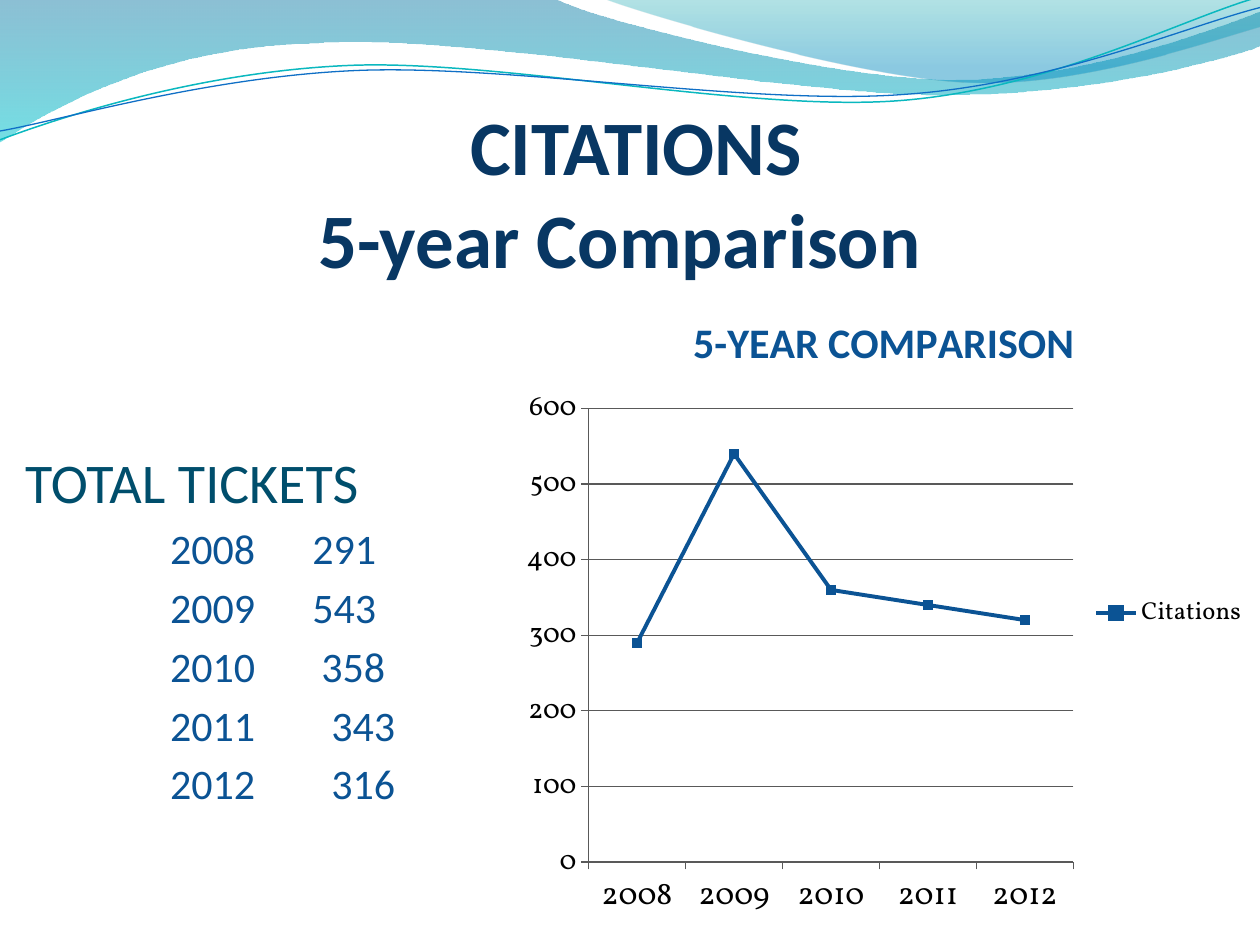
"""Build a slide comparing five years of citations in a list and a line chart."""
import lxml.etree
import pptx
import pptx.chart.data
import pptx.dml.color
import pptx.enum.chart
import pptx.enum.text
import pptx.oxml
import pptx.oxml.ns
import pptx.util

RGBColor = pptx.dml.color.RGBColor
Inches = pptx.util.Inches
Pt = pptx.util.Pt
qn = pptx.oxml.ns.qn

NAVY = RGBColor(0x08, 0x37, 0x63)
BLUE = RGBColor(0x0B, 0x53, 0x94)
TEAL = RGBColor(0x00, 0x4E, 0x6C)
BLACK = RGBColor(0x00, 0x00, 0x00)
GRAY = RGBColor(0x59, 0x59, 0x59)
WAVE_TEAL = RGBColor(0x0A, 0xB8, 0xBF)
WAVE_BLUE = RGBColor(0x0F, 0x6F, 0xC6)
HEADING_FONT = "Calibri"
CHART_FONT = "Vollkorn"

TITLE = "CITATIONS\v5-year Comparison"
LIST_HEADING = "TOTAL TICKETS"
TICKETS = [("2008", "291"), ("2009", "543"), ("2010", "358"), ("2011", "343"), ("2012", "316")]
YEAR_TAB = 1.15
VALUE_TABS = [2.28, 2.28, 2.35, 2.43, 2.43]
CHART_TITLE = "5-YEAR COMPARISON"
SERIES_NAME = "Citations"
CHART_VALUES = [290, 540, 360, 340, 320]

BANDS = [
    ([(0, 0), [(4.4, -0.01)],
      [(4.76, 0.17), (6.64, 0.63), (7.58, 0.63)],
      [(8.53, 0.63), (9.58, 0.26), (10, 0.09)],
      [(10.01, 0.36)],
      [(9.83, 0.44), (8.7, 0.76), (7.46, 0.75)],
      [(6.22, 0.75), (3.82, 0.28), (2.57, 0.34)],
      [(1.29, 0.36), (0.46, 0.83), (-0.01, 1.13)]],
     [(0, RGBColor(0x00, 0x74, 0xA1), 45), (100, RGBColor(0x00, 0xC6, 0xCF), 55)]),
    ([(4.79, -0.01),
      [(5.09, 0.11), (6.82, 0.62), (7.69, 0.65)],
      [(8.56, 0.69), (9.61, 0.32), (10, 0.21)],
      [(10, 0)]],
     [(0, RGBColor(0x00, 0xA1, 0xA9), 30), (80, RGBColor(0x00, 0x8B, 0xBF), 45)]),
]
WAVES = [
    ([(0, 1.11),
      [(0.48, 0.93), (1.58, 0.57), (2.77, 0.52)],
      [(3.95, 0.47), (5.93, 0.89), (7.13, 0.8)],
      [(8.33, 0.71), (9.38, 0.15), (9.98, -0.02)]], WAVE_TEAL, 0.85),
    ([(0, 1.04),
      [(0.47, 0.96), (1.64, 0.61), (2.83, 0.56)],
      [(4.03, 0.51), (5.97, 0.84), (7.17, 0.75)],
      [(8.36, 0.67), (9.41, 0.21), (10, 0.06)]], WAVE_BLUE, 0.75),
]


def add_outline(slide, outline, closed):
    """Draw an outline, turning each three-point segment into a curve."""
    start, *segments = outline
    builder = slide.shapes.build_freeform(*map(Inches, start))
    builder.add_line_segments([tuple(map(Inches, segment[-1])) for segment in segments], close=closed)
    shape = builder.convert_to_shape()
    shape.shadow.inherit = False
    lines = list(shape._element.iter(qn("a:lnTo")))
    for line, segment in zip(lines, segments):
        if len(segment) == 3:
            curve = lxml.etree.Element(qn("a:cubicBezTo"))
            for x, y in segment:
                lxml.etree.SubElement(curve, qn("a:pt"), x=str(Inches(x) - shape.left),
                                      y=str(Inches(y) - shape.top))
            line.getparent().replace(line, curve)
    return shape


def fill_gradient(shape, stops):
    """Fill a shape with a vertical, partly transparent gradient."""
    shape.fill.gradient()
    gradient = shape._element.spPr.find(qn("a:gradFill"))
    for child in list(gradient):
        gradient.remove(child)
    stop_list = lxml.etree.SubElement(gradient, qn("a:gsLst"))
    for position, color, opacity in stops:
        stop = lxml.etree.SubElement(stop_list, qn("a:gs"), pos=str(position * 1000))
        tint = lxml.etree.SubElement(stop, qn("a:srgbClr"), val=str(color))
        lxml.etree.SubElement(tint, qn("a:alpha"), val=str(opacity * 1000))
    lxml.etree.SubElement(gradient, qn("a:lin"), ang="5400000", scaled="0")


def style_font(font, size, color, name, bold=False):
    """Set the look of a font."""
    font.size, font.name, font.bold = Pt(size), name, bold
    font.color.rgb = color


def add_text(slide, box, lines, styles):
    """Add a text box with one style per line."""
    frame = slide.shapes.add_textbox(*map(Inches, box)).text_frame
    frame.word_wrap = True
    for index, (line, style) in enumerate(zip(lines, styles)):
        paragraph = frame.paragraphs[0] if index == 0 else frame.add_paragraph()
        paragraph.text = line
        for run in paragraph.runs:
            style_font(run.font, *style)
    return frame


def set_layout(parent, index, **shares):
    """Place a chart part by shares of the chart's size."""
    for old in parent.findall(qn("c:layout")):
        parent.remove(old)
    layout = pptx.oxml.parse_xml(f'<c:layout {pptx.oxml.ns.nsdecls("c")}/>')
    manual = lxml.etree.SubElement(layout, qn("c:manualLayout"))
    if "w" in shares:
        lxml.etree.SubElement(manual, qn("c:layoutTarget"), val="inner")
    for mode in ("xMode", "yMode"):
        lxml.etree.SubElement(manual, qn(f"c:{mode}"), val="edge")
    for key, share in shares.items():
        lxml.etree.SubElement(manual, qn(f"c:{key}"), val=str(share))
    parent.insert(index, layout)


def add_citation_chart(slide):
    """Add the line chart of citations."""
    data = pptx.chart.data.CategoryChartData()
    data.categories = [year for year, count in TICKETS]
    data.add_series(SERIES_NAME, CHART_VALUES)
    chart = slide.shapes.add_chart(pptx.enum.chart.XL_CHART_TYPE.LINE_MARKERS_STACKED,
                                   *map(Inches, (4.08, 2.33, 5.92, 5.07)), data).chart
    style_font(chart.font, 10, BLACK, CHART_FONT)
    chart.has_title = True
    title = chart.chart_title
    title.text_frame.text = CHART_TITLE
    style_font(title.text_frame.paragraphs[0].runs[0].font, 24, BLUE, HEADING_FONT, True)
    set_layout(title._element, 1, x=0.23, y=0.02)
    set_layout(chart._chartSpace.chart.plotArea, 0, x=0.1, y=0.18, w=0.65, h=0.71)

    for axis, size in ((chart.category_axis, 18), (chart.value_axis, 16)):
        style_font(axis.tick_labels.font, size, BLACK, CHART_FONT)
        axis.major_tick_mark = pptx.enum.chart.XL_TICK_MARK.OUTSIDE
        axis.format.line.color.rgb = GRAY
    chart.value_axis.minimum_scale, chart.value_axis.maximum_scale = 0, 600
    chart.value_axis.major_unit = 100
    chart.value_axis.major_gridlines.format.line.color.rgb = GRAY

    chart.has_legend = True
    chart.legend.position = pptx.enum.chart.XL_LEGEND_POSITION.RIGHT
    chart.legend.include_in_layout = False
    style_font(chart.legend.font, 14, BLACK, CHART_FONT)

    chart.plots[0].vary_by_categories = False
    series = chart.plots[0].series[0]
    series.smooth = False
    series.format.line.color.rgb = BLUE
    series.format.line.width = Pt(2.25)
    series.marker.style = pptx.enum.chart.XL_MARKER_STYLE.SQUARE
    series.marker.size = 5
    series.marker.format.fill.solid()
    series.marker.format.fill.fore_color.rgb = BLUE
    series.marker.format.line.color.rgb = BLUE


def main():
    """Build and save the slide."""
    presentation = pptx.Presentation()
    presentation.slide_width, presentation.slide_height = Inches(10), Inches(7.5)
    slide = presentation.slides.add_slide(presentation.slide_layouts[6])

    for outline, stops in BANDS:
        band = add_outline(slide, outline, True)
        fill_gradient(band, stops)
        band.line.fill.background()
    for outline, color, width in WAVES:
        wave = add_outline(slide, outline, False)
        wave.fill.background()
        wave.line.color.rgb = color
        wave.line.width = Pt(width)

    title = add_text(slide, (0.42, 1.42, 9, 0.83), [TITLE], [(44, NAVY, HEADING_FONT, True)])
    title.margin_left = title.margin_right = title.margin_bottom = 0
    title.vertical_anchor = pptx.enum.text.MSO_ANCHOR.BOTTOM
    heading = title.paragraphs[0]
    heading.alignment = pptx.enum.text.PP_ALIGN.CENTER
    heading._p.get_or_add_pPr().set("indent", str(Inches(0.26)))

    rows = [f"\t{year}\t{count}" for year, count in TICKETS]
    tickets = add_text(slide, (-0.33, 3.5, 4.67, 3.65), [LIST_HEADING, *rows],
                       [(32, TEAL, HEADING_FONT)] + [(24, BLUE, HEADING_FONT)] * len(rows))
    tickets.margin_left = Inches(0.53)
    for paragraph, value_tab in zip(tickets.paragraphs[1:], VALUE_TABS):
        paragraph.space_before = Pt(4.8)
        tabs = lxml.etree.SubElement(paragraph._p.get_or_add_pPr(), qn("a:tabLst"))
        for position in (YEAR_TAB, value_tab):
            lxml.etree.SubElement(tabs, qn("a:tab"), pos=str(Inches(position)), algn="l")

    add_citation_chart(slide)
    presentation.save("out.pptx")


if __name__ == "__main__":
    main()
